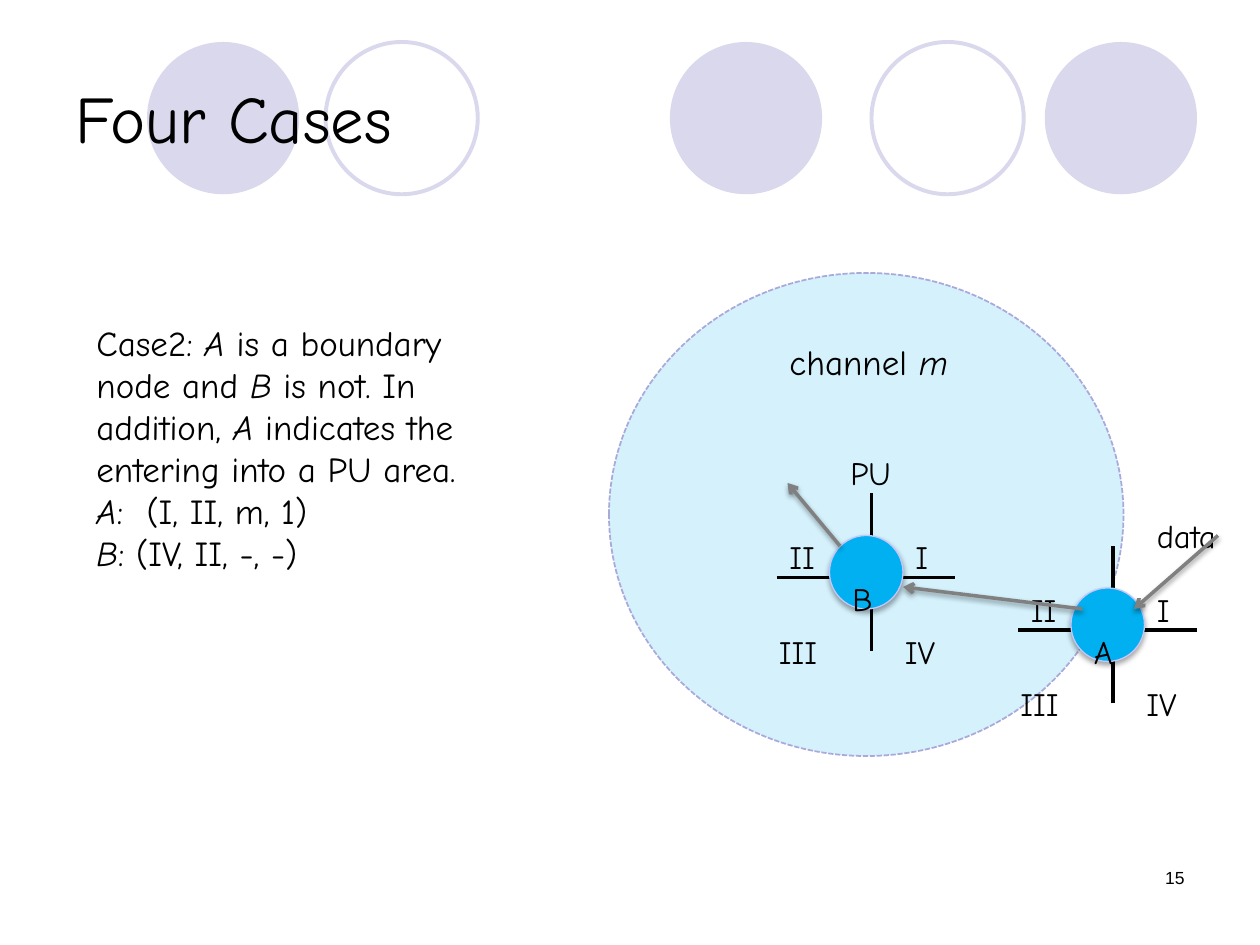
import pptx
import pptx.dml.color
import pptx.enum.dml
import pptx.enum.shapes
import pptx.enum.text
import pptx.oxml
import pptx.oxml.ns
import pptx.util
from dataclasses import dataclass

PX = 914400 // 120  # EMU per px: the slide is 1200 by 900 px
OVAL = pptx.enum.shapes.MSO_SHAPE.OVAL
STRAIGHT = pptx.enum.shapes.MSO_CONNECTOR.STRAIGHT
ALIGN = pptx.enum.text.PP_ALIGN
ANCHOR = pptx.enum.text.MSO_ANCHOR


@dataclass(frozen=True)
class Theme:
    font: str = "Comic Neue"
    number_font: str = "Arial"
    ink: str = "000000"
    decor: str = "D9D8EC"
    node: str = "00B0F0"
    node_edge: str = "C6C6FB"
    area_edge: str = "A9A9DA"
    arrow: str = "808080"
    title_size: int = 38
    body_size: int = 20
    label_size: int = 32
    number_size: int = 10


THEME = Theme()


def px(*lengths):
    return [n * PX for n in lengths]


def rgb(color):
    return pptx.dml.color.RGBColor.from_string(color)


def add_xml(parent, xml):
    tag, rest = xml.split(" ", 1) if " " in xml else (xml[:-2], "/>")
    parent.append(pptx.oxml.parse_xml(f"{tag} {pptx.oxml.ns.nsdecls('a')} {rest}"))


def set_shadow(sp, alpha=0, blur=3.1, dist=1.8):
    """Give a downward shadow of alpha percent, or none; call after the line is set."""
    if not alpha:
        add_xml(sp._element.spPr, "<a:effectLst/>")
        return
    add_xml(sp._element.spPr,
            f'<a:effectLst ><a:outerShdw blurRad="{int(blur * 12700)}" '
            f'dist="{int(dist * 12700)}" dir="5400000" rotWithShape="0">'
            f'<a:srgbClr val="{THEME.ink}"><a:alpha val="{alpha * 1000}"/></a:srgbClr>'
            '</a:outerShdw></a:effectLst>')


def add_oval(slide, box, fill=None, line=None, width=1, alpha=None, dash=None, shadow=0):
    sp = slide.shapes.add_shape(OVAL, *px(*box))
    if fill:
        sp.fill.solid()
        sp.fill.fore_color.rgb = rgb(fill)
    else:
        sp.fill.background()
    if alpha:
        clr = sp._element.spPr.find(".//" + pptx.oxml.ns.qn("a:srgbClr"))
        add_xml(clr, f'<a:alpha val="{alpha * 1000}"/>')
    if line:
        sp.line.color.rgb = rgb(line)
        sp.line.width = pptx.util.Pt(width)
    else:
        sp.line.fill.background()
    if dash:
        sp.line.dash_style = dash
    set_shadow(sp, shadow)


def add_line(slide, start, end, color=THEME.ink, width=2.25, arrow=False):
    cxn = slide.shapes.add_connector(STRAIGHT, *px(*start, *end))
    cxn.line.color.rgb = rgb(color)
    cxn.line.width = pptx.util.Pt(width)
    if arrow:
        add_xml(cxn.line._get_or_add_ln(), '<a:tailEnd type="arrow"/>')
    set_shadow(cxn, 38 if arrow else 0, dist=1.6)


def write(tf, paragraphs, size, font=THEME.font, align=ALIGN.LEFT, anchor=ANCHOR.TOP, baseline=0):
    """Fill a text frame; text between asterisks is italic."""
    for name, value in {"word_wrap": True, "vertical_anchor": anchor,
                        "auto_size": pptx.enum.text.MSO_AUTO_SIZE.NONE}.items():
        setattr(tf, name, value)
    for i, text in enumerate(paragraphs):
        p = tf.paragraphs[0] if i == 0 else tf.add_paragraph()
        p.alignment = align
        for j, part in enumerate(text.split("*")):
            if not part:
                continue
            r = p.add_run()
            r.text = part
            for name, value in {"size": pptx.util.Pt(size), "name": font,
                                "italic": j % 2 == 1}.items():
                setattr(r.font, name, value)
            r.font.color.rgb = rgb(THEME.ink)
            if baseline:
                r._r.get_or_add_rPr().set("baseline", str(baseline * 1000))


def add_text(slide, box, paragraphs, size=THEME.body_size, **style):
    write(slide.shapes.add_textbox(*px(*box)).text_frame, paragraphs, size, **style)


def add_label(slide, box, text):
    add_text(slide, box, [text], THEME.label_size, baseline=-25)


def header(slide, x, y, w, h):
    for dx, filled in ((80, True), (250, False), (578, True), (770, False), (935, True)):
        style = {"fill": THEME.decor} if filled else {"line": THEME.decor, "width": 2.25}
        add_oval(slide, (x + dx, y + 4, 145, 145), **style)
    title = slide.shapes.title
    for name, value in zip(("left", "top", "width", "height"), px(x, y, w, h)):
        setattr(title, name, value)
    write(title.text_frame, ["Four Cases"], THEME.title_size, anchor=ANCHOR.MIDDLE)
    slide.shapes._spTree.append(title._element)  # in front of the circles


def quadrant_node(slide, x, y, name):
    """Draw a node on its axes, with the four quadrants named."""
    add_line(slide, (x + 10, y + 80), (x + 180, y + 80))
    add_line(slide, (x + 100, y + 150), (x + 100, y))
    add_oval(slide, (x + 60, y + 40, 70, 70), THEME.node, THEME.node_edge, 0.75, shadow=35)
    for text, dx, dy, w in ((name, 70, 40, 50), ("I", 130, 0, 50), ("II", 10, 0, 100),
                            ("III", 0, 90, 100), ("IV", 120, 90, 80)):
        add_label(slide, (x + dx, y + dy, w, 50), text)


def channel_diagram(slide, x, y, w, h):
    add_oval(slide, (x, y, w, h), THEME.node, THEME.area_edge, 1, alpha=17,
             dash=pptx.enum.dml.MSO_LINE.SQUARE_DOT)
    add_label(slide, (x + 218, y + 130, 91, 71), "PU")
    add_text(slide, (x + 160, y + 58, 220, 72), ["channel *m*"])
    quadrant_node(slide, x + 380, y + 260, "A")
    quadrant_node(slide, x + 150, y + 210, "B")
    add_label(slide, (x + 510, y + 190, 110, 50), "data")
    for x1, y1, x2, y2 in ((580, 250, 500, 320), (451, 320, 280, 299), (220, 260, 170, 200)):
        add_line(slide, (x + x1, y + y1), (x + x2, y + y2), THEME.arrow, 2, arrow=True)


def main():
    prs = pptx.Presentation()
    prs.slide_width, prs.slide_height = px(1200, 900)
    slide = prs.slides.add_slide(prs.slide_layouts[5])
    header(slide, 60, 36, 1080, 150)
    add_text(slide, (860, 820, 280, 60), ["15"], THEME.number_size,
             font=THEME.number_font, align=ALIGN.RIGHT)
    channel_diagram(slide, 580, 260, 490, 460)
    add_text(slide, (80, 300, 400, 380), [
        "Case2: *A* is a boundary node and *B* is not. In addition, "
        "*A* indicates the entering into a PU area.",
        "*A*:  (I, II, m, 1)",
        "*B*: (IV, II, -, -)"])
    prs.save("out.pptx")


if __name__ == "__main__":
    main()
